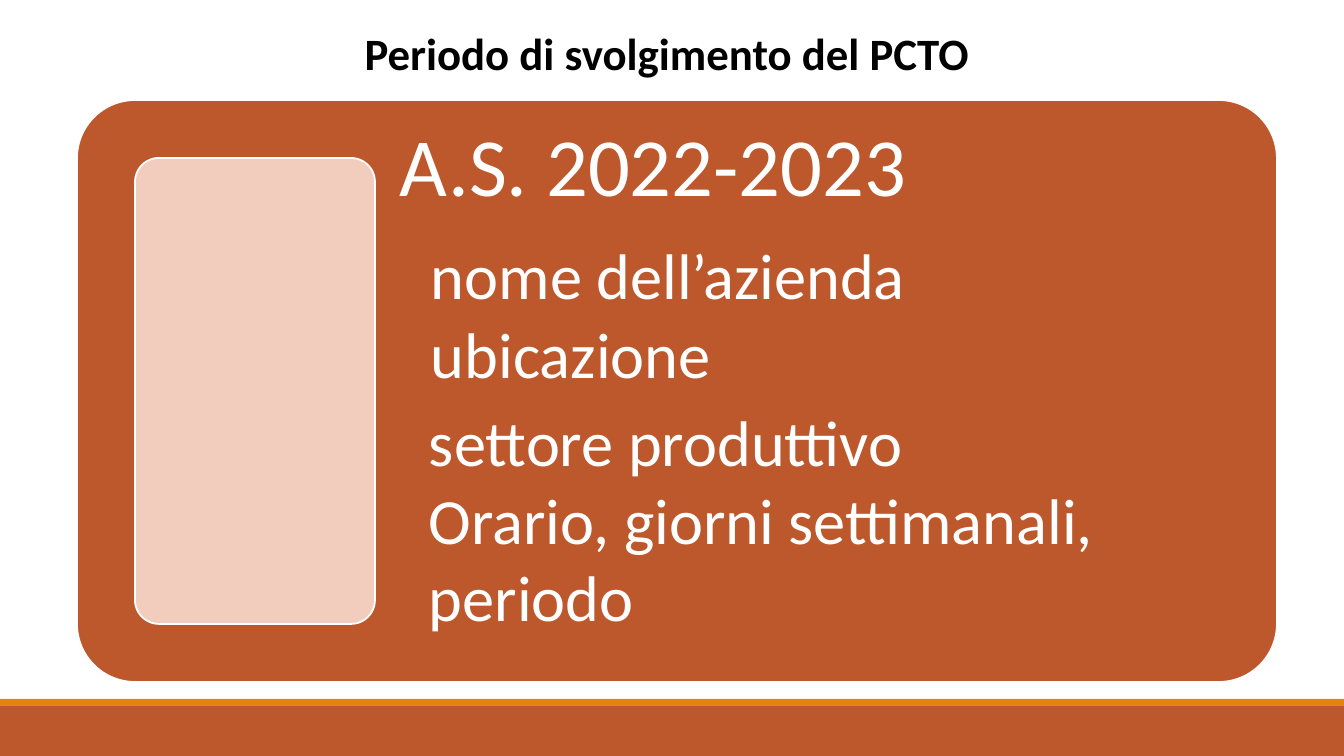
from dataclasses import dataclass

from lxml import etree
from pptx import Presentation
from pptx.dml.color import RGBColor
from pptx.enum.shapes import MSO_SHAPE
from pptx.enum.text import MSO_ANCHOR, MSO_AUTO_SIZE, PP_ALIGN
from pptx.oxml.ns import qn
from pptx.util import Pt

RECT, ROUNDED = MSO_SHAPE.RECTANGLE, MSO_SHAPE.ROUNDED_RECTANGLE
TOP, MIDDLE = MSO_ANCHOR.TOP, MSO_ANCHOR.MIDDLE
LEFT, CENTER = PP_ALIGN.LEFT, PP_ALIGN.CENTER
NO_FIT = MSO_AUTO_SIZE.NONE
TITLE_AND_CONTENT = 1


@dataclass(frozen=True)
class Theme:
    font: str = "Calibri"
    rust: str = "BD582C"
    orange: str = "E48312"
    peach: str = "F2CDBD"
    white: str = "FFFFFF"
    black: str = "000000"
    title_size: int = 32
    heading_size: int = 59
    detail_size: int = 46
    outline: float = 1.25


THEME = Theme()

TITLE = "Periodo di svolgimento del PCTO"
HEADING = "A.S. 2022-2023"
# text, indent in px, line spacing, space after as a share of the type size
DETAILS = [
    ("nome dell’azienda", 31, 0.9, 0.15),
    ("ubicazione", 31, 0.9, 0.15),
    ("settore produttivo", 29, 1.0, 0),
    ("Orario, giorni settimanali, periodo", 29, 1.0, 0),
]

PAGE_WIDTH, PAGE_HEIGHT = 1344, 756
FOOTER_HEIGHT, STRIPE_HEIGHT = 50, 7
PANEL = (77, 100, 1200, 582)
PANEL_INSET = 58
SIDE_WIDTH = 240
TEXT_INSET = 25
CORNER = 0.1
TITLE_BOX = (347, 21, 640, 64)


def px(length):
    return round(length * 914400 / 100.8)


def add_block(page, kind, bounds, fill, outline=None):
    block = page.shapes.add_shape(kind, *map(px, bounds))
    block.shadow.inherit = False
    block.fill.solid()
    block.fill.fore_color.rgb = RGBColor.from_string(fill)
    if kind == ROUNDED:
        block.adjustments[0] = CORNER
    if outline:
        block.line.color.rgb = RGBColor.from_string(outline)
        block.line.width = Pt(THEME.outline)
    else:
        block.line.fill.background()


def place(page, holder, bounds, inset, anchor):
    """Move a placeholder to its box, in front of everything drawn so far."""
    for name, length in zip(("left", "top", "width", "height"), bounds):
        setattr(holder, name, px(length))
    page.shapes.element.append(holder.element)
    margins = {f"margin_{side}": px(inset) for side in ("left", "top", "right", "bottom")}
    frame = holder.text_frame
    for name, value in {**margins, "word_wrap": True, "auto_size": NO_FIT,
                        "vertical_anchor": anchor}.items():
        setattr(frame, name, value)
    return frame


def write(para, text, size, color, align=LEFT, bold=False, indent=0, spacing=1.0, after=0):
    for name, value in {"alignment": align, "line_spacing": spacing,
                        "space_before": Pt(0), "space_after": Pt(round(size * after))}.items():
        setattr(para, name, value)
    properties = para._p.get_or_add_pPr()
    properties.set("marL", str(px(indent)))
    properties.set("indent", "0")
    etree.SubElement(properties, qn("a:buNone"))
    span = para.add_run()
    span.text = text
    for name, value in {"name": THEME.font, "size": Pt(size), "bold": bold}.items():
        setattr(span.font, name, value)
    span.font.color.rgb = RGBColor.from_string(color)


def main():
    deck = Presentation()
    deck.slide_width, deck.slide_height = px(PAGE_WIDTH), px(PAGE_HEIGHT)
    page = deck.slides.add_slide(deck.slide_layouts[TITLE_AND_CONTENT])
    title, body = page.placeholders

    footer_top = PAGE_HEIGHT - FOOTER_HEIGHT
    left, top, width, height = PANEL
    side = (left + PANEL_INSET, top + PANEL_INSET, SIDE_WIDTH, height - 2 * PANEL_INSET)
    text_left = side[0] + SIDE_WIDTH

    add_block(page, RECT, (0, footer_top, PAGE_WIDTH, FOOTER_HEIGHT), THEME.rust)
    add_block(page, RECT, (0, footer_top - STRIPE_HEIGHT, PAGE_WIDTH, STRIPE_HEIGHT), THEME.orange)
    add_block(page, ROUNDED, PANEL, THEME.rust, THEME.white)
    add_block(page, ROUNDED, side, THEME.peach, THEME.white)

    text_box = (text_left, top, left + width - text_left, height)
    frame = place(page, body, text_box, TEXT_INSET, TOP)
    write(frame.paragraphs[0], HEADING, THEME.heading_size, THEME.white, spacing=0.9, after=0.35)
    for text, indent, spacing, after in DETAILS:
        write(frame.add_paragraph(), text, THEME.detail_size, THEME.white,
              indent=indent, spacing=spacing, after=after)

    frame = place(page, title, TITLE_BOX, 5, MIDDLE)
    write(frame.paragraphs[0], TITLE, THEME.title_size, THEME.black, CENTER, bold=True)

    deck.save("out.pptx")


if __name__ == "__main__":
    main()
